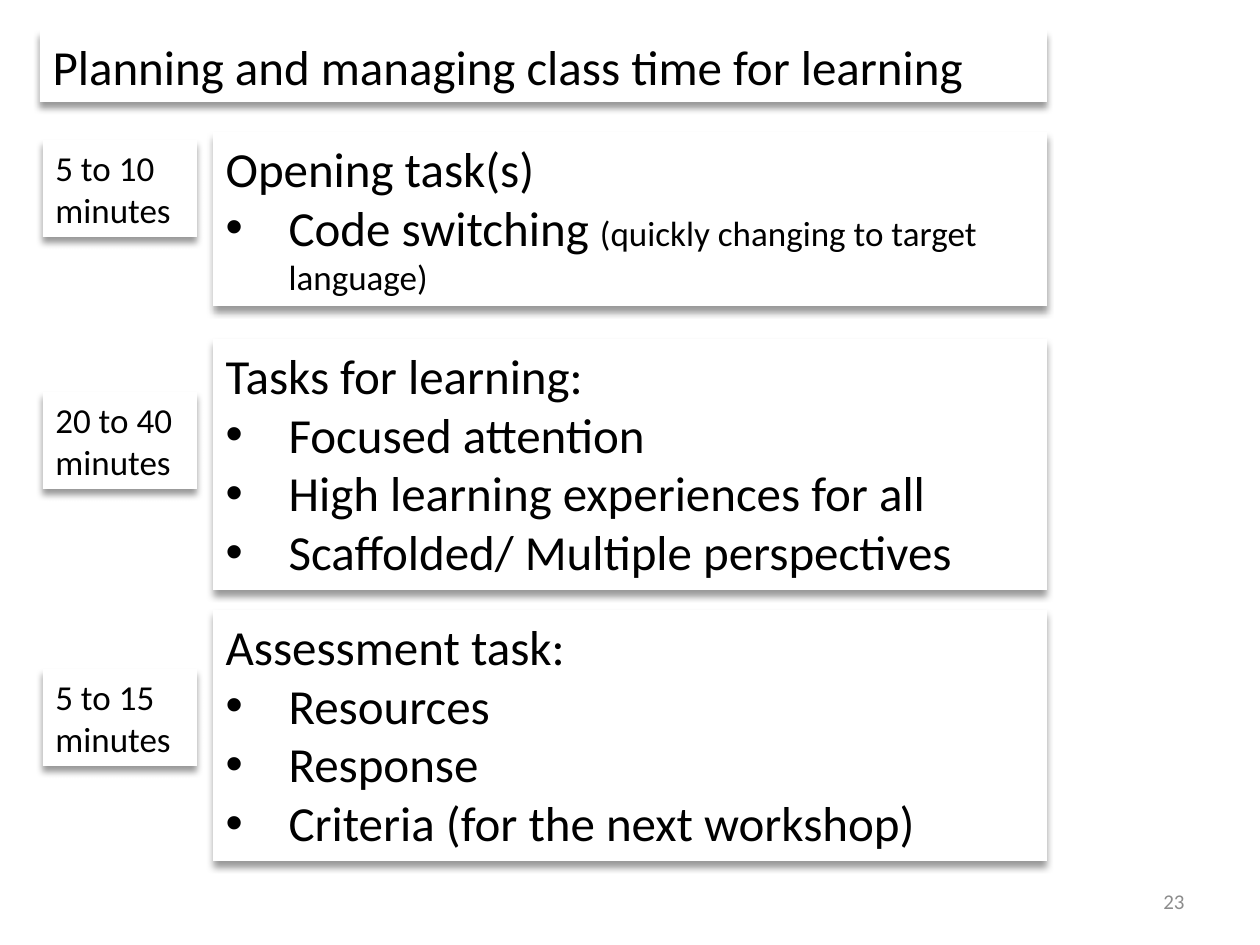
from lxml import etree
from pptx import Presentation
from pptx.dml.color import RGBColor
from pptx.enum.text import MSO_ANCHOR, MSO_AUTO_SIZE, PP_ALIGN
from pptx.oxml.ns import qn
from pptx.util import Inches, Pt

PX = Inches(1) / 126
TOP, MIDDLE = MSO_ANCHOR.TOP, MSO_ANCHOR.MIDDLE
LEFT, RIGHT = PP_ALIGN.LEFT, PP_ALIGN.RIGHT
FIXED = MSO_AUTO_SIZE.NONE
COLORS = {"card": "FFFFFF", "text": "000000", "number": "8C8C8C", "shadow": "000000"}
INDENT = 63


def emu(px):
    return round(px * PX)


def rgb(name):
    return RGBColor.from_string(COLORS[name])


def write(para, runs, size=28, color="text", align=LEFT, bullet=False):
    """Fill a paragraph from a string or a list of (text, size) pairs."""
    props = para._p.get_or_add_pPr()
    indent = emu(INDENT) if bullet else 0
    props.set("marL", str(indent))
    props.set("indent", str(-indent))
    if bullet:
        etree.SubElement(props, qn("a:buFont"), typeface="Arial")
        etree.SubElement(props, qn("a:buChar"), char="•")
    else:
        etree.SubElement(props, qn("a:buNone"))
    para.alignment = align
    para.space_before = Pt(0)
    for text, points in [(runs, size)] if isinstance(runs, str) else runs:
        run = para.add_run()
        run.text = text
        font = run.font
        font.name, font.size, font.bold = "Calibri", Pt(points), False
        font.color.rgb = rgb(color)


class Deck:
    def __init__(self, slide):
        self.slide = slide
        self.bodies = [p for p in slide.placeholders if p.placeholder_format.idx in range(1, 5)]

    def frame(self, shape, box, anchor=TOP):
        """Place a shape and return its text frame, ready to fill."""
        shape.left, shape.top, shape.width, shape.height = map(emu, box)
        frame = shape.text_frame
        frame.word_wrap = True
        frame.auto_size = FIXED
        frame.vertical_anchor = anchor
        return frame

    def card(self, shape, box):
        """Give a shape the white, shadowed look of a card."""
        frame = self.frame(shape, box)
        shape.fill.solid()
        shape.fill.fore_color.rgb = rgb("card")
        shape.line.fill.background()
        effects = etree.SubElement(shape._element.spPr, qn("a:effectLst"))
        shadow = etree.SubElement(effects, qn("a:outerShdw"), blurRad=str(Pt(4)),
                                  dist=str(Pt(3)), dir="5400000", rotWithShape="0")
        tint = etree.SubElement(shadow, qn("a:srgbClr"), val=COLORS["shadow"])
        etree.SubElement(tint, qn("a:alpha"), val="40000")
        return frame

    def label(self):
        return self.slide.shapes.add_textbox(0, 0, 0, 0)

    def title(self, text, box):
        frame = self.card(self.slide.shapes.title, box)
        write(frame.paragraphs[0], text)

    def tasks(self, head, items, box):
        frame = self.card(self.bodies.pop(0), box)
        write(frame.paragraphs[0], head)
        for item in items:
            write(frame.add_paragraph(), item, bullet=True)

    def time(self, text, box):
        frame = self.card(self.label(), box)
        write(frame.paragraphs[0], text, size=20)

    def number(self, text, box):
        frame = self.frame(self.label(), box, MIDDLE)
        write(frame.paragraphs[0], text, size=12, color="number", align=RIGHT)

    def tidy(self):
        """Remove the body placeholders left empty."""
        for body in self.bodies:
            body._element.getparent().remove(body._element)


STAGES = [
    ("5 to 10 minutes", 140, "Opening task(s)", 132, 174,
     [[("Code switching ", 28), ("(quickly changing to target language)", 20)]]),
    ("20 to 40 minutes", 392, "Tasks for learning:", 339, 251,
     ["Focused attention", "High learning experiences for all",
      "Scaffolded/ Multiple perspectives"]),
    ("5 to 15 minutes", 669, "Assessment task:", 610, 251,
     ["Resources", "Response", "Criteria (for the next workshop)"]),
]


def main():
    prs = Presentation()
    prs.slide_width, prs.slide_height = emu(1260), emu(945)
    layout = prs.slide_layouts.get_by_name("Comparison")
    deck = Deck(prs.slides.add_slide(layout))
    deck.title("Planning and managing class time for learning", (40, 30, 1007, 72))
    for span, mark, head, top, height, items in STAGES:
        deck.tasks(head, items, (213, top, 834, height))
        deck.time(span, (43, mark, 154, 97))
    deck.number("23", (903, 876, 294, 50))
    deck.tidy()
    prs.save("out.pptx")


if __name__ == "__main__":
    main()
